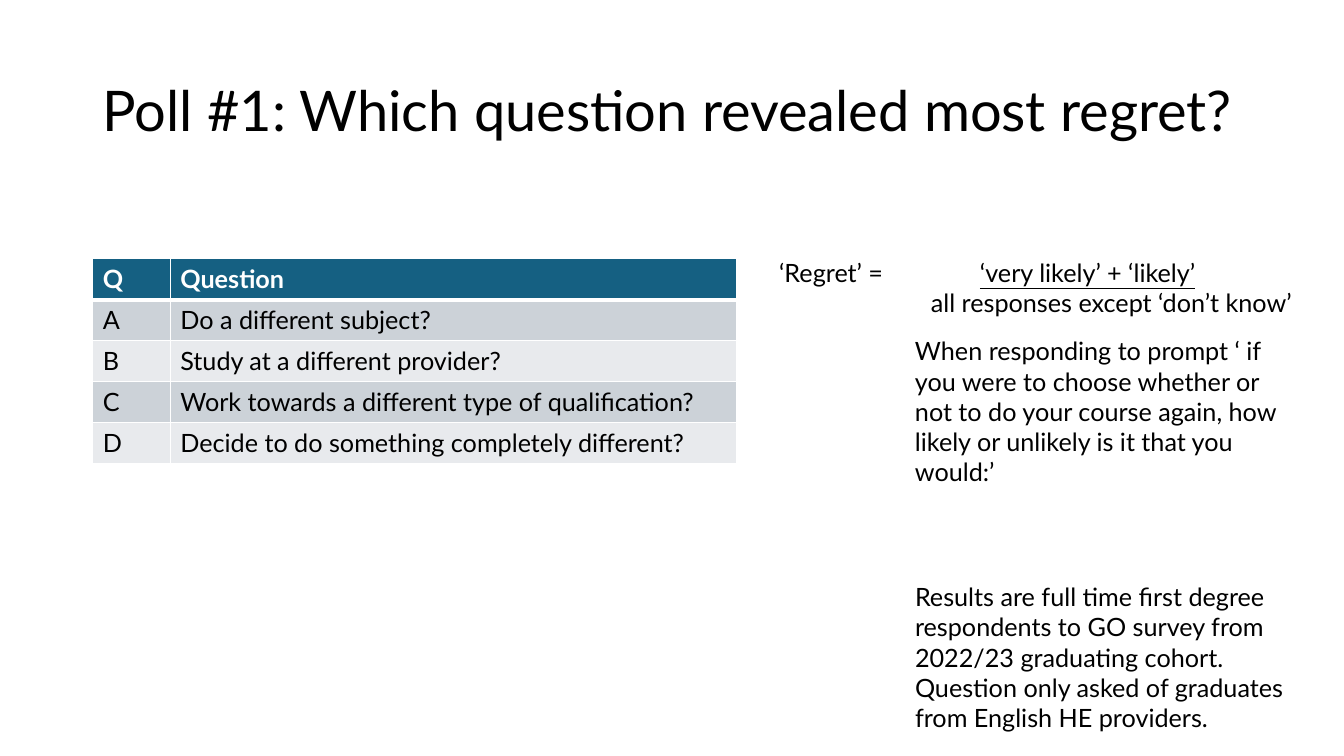
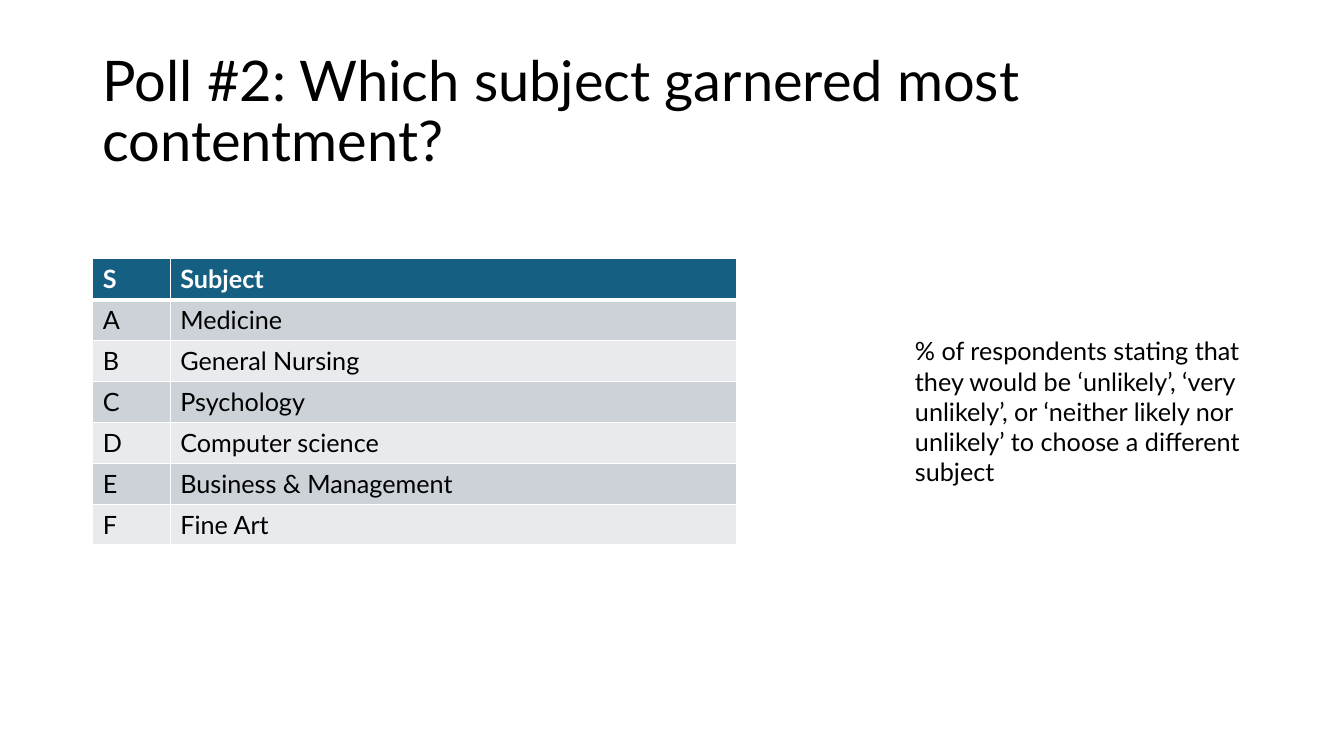
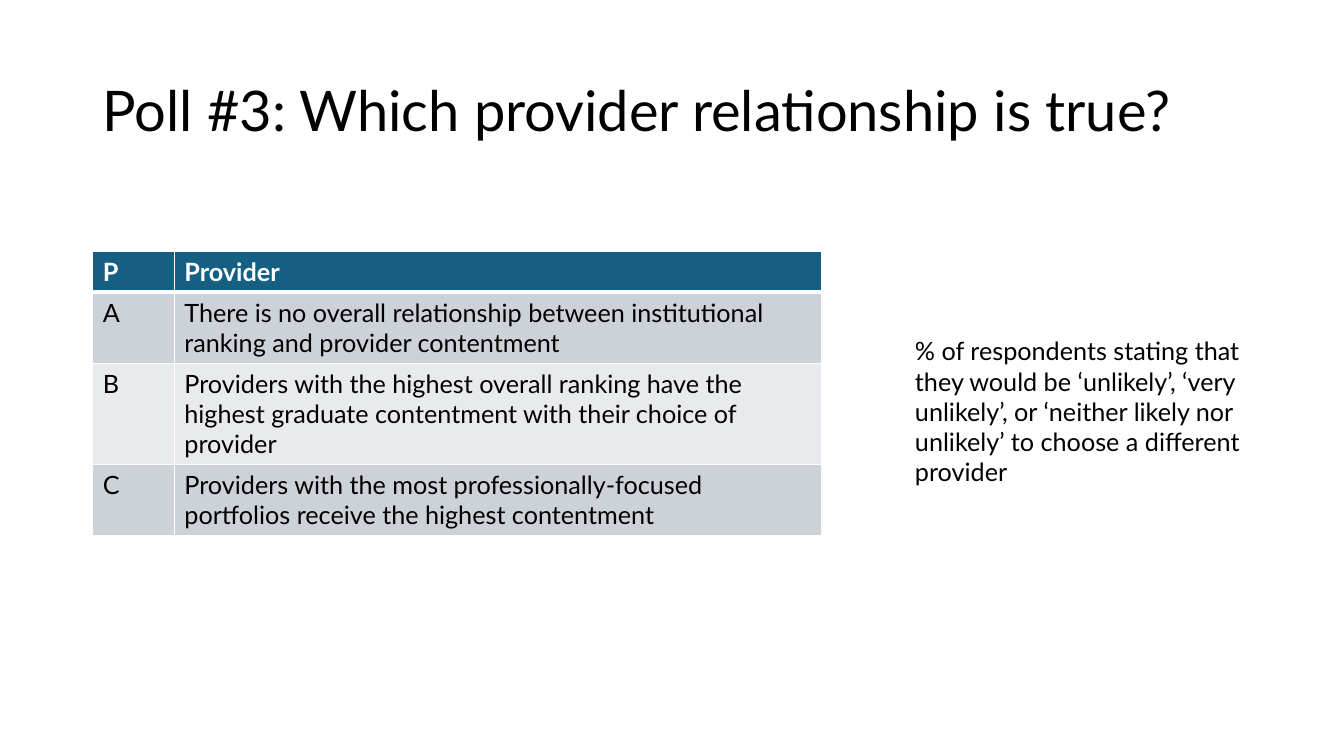
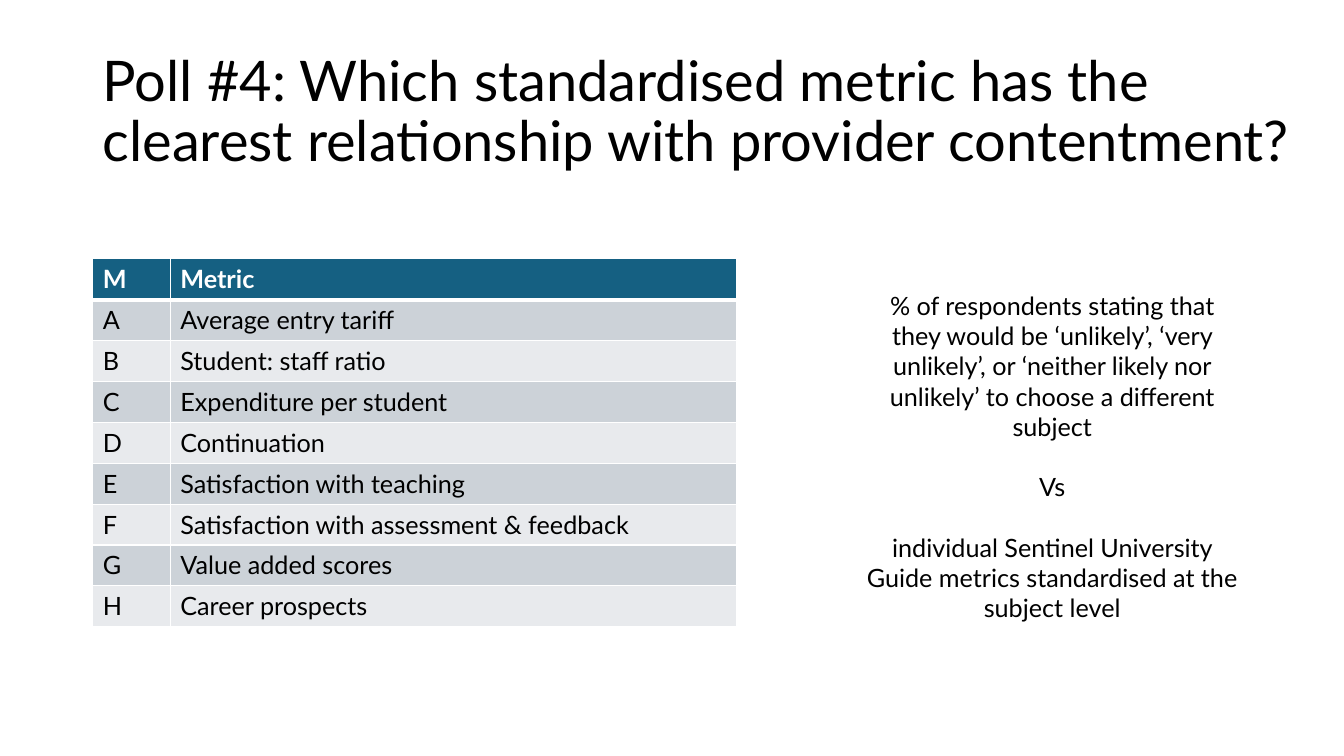
from collections import namedtuple

from lxml import etree
from pptx import Presentation
from pptx import util as u
from pptx.dml import color
from pptx.enum import text
from pptx.oxml import ns

Box = namedtuple("Box", "left top width height")
Poll = namedtuple("Poll", "title title_box table_box key_width header answers lines")

WHITE, BLACK, TEAL = "FFFFFF", "000000", "156082"
BANDS = ("CCD2D8", "E8EAED")
TITLE = {"name": "Lato", "size": u.Pt(40), "bold": False}
BODY = {"name": "Lato", "size": u.Pt(18), "bold": False}
HEADER = {**BODY, "bold": True}
LINE_HEIGHT, ROW_PADDING = 21.6, 7.6
TITLE_BOX = Box(66.24, 28.8, 864, 104.4)
TABLE_BOX = Box(66.24, 184.9, 460.1, 0)
KEY_WIDTH = 55.4
NOTE_BOX = Box(646.5, 236.2, 283.7, 94.3)
CONTENTMENT = ("% of respondents stating that they would be ‘unlikely’, ‘very unlikely’, "
               "or ‘neither likely nor unlikely’ to choose a different ")


def rgb(value):
    """Return the colour for a hex string."""
    return color.RGBColor.from_string(value)


def points(box):
    """Return the measures of a box as lengths."""
    return [u.Pt(value) for value in box]


def apply(target, values):
    """Set each named attribute of the target."""
    for name, value in values.items():
        setattr(target, name, value)


def add_run(paragraph, words, font, hex_color=BLACK, **extra):
    """Append a formatted run to a paragraph."""
    run = paragraph.add_run()
    run.text = words
    apply(run.font, {**font, **extra})
    run.font.color.rgb = rgb(hex_color)


def add_text(slide, box, paragraphs, font=BODY, frame_format=None, **paragraph_format):
    """Place a wrapped text box and return its frame."""
    frame = slide.shapes.add_textbox(*points(box)).text_frame
    apply(frame, {"word_wrap": True, **(frame_format or {})})
    for index, words in enumerate(paragraphs):
        paragraph = frame.add_paragraph() if index else frame.paragraphs[0]
        apply(paragraph, paragraph_format)
        if index and len(paragraphs) > 1:
            paragraph.space_before = u.Pt(LINE_HEIGHT)
        add_run(paragraph, words, font)
    return frame


def add_title(slide, box, words):
    """Place the slide title, centred vertically in its box."""
    add_text(slide, box, [words], TITLE, {"vertical_anchor": text.MSO_ANCHOR.MIDDLE},
             line_spacing=0.9)


def set_borders(cell, widths):
    """Draw white borders of the given widths on a cell."""
    properties = cell._tc.get_or_add_tcPr()
    for side, width in widths.items():
        line = etree.SubElement(properties, ns.qn(f"a:ln{side}"), w=str(u.Pt(width)))
        fill = etree.SubElement(line, ns.qn("a:solidFill"))
        etree.SubElement(fill, ns.qn("a:srgbClr"), val=WHITE)


def add_answers(slide, poll):
    """Place the table of lettered answers."""
    box = poll.table_box
    rows = [poll.header] + list(zip("ABCDEFGH", poll.answers))
    lines = poll.lines or [1] * len(rows)
    heights = [ROW_PADDING + LINE_HEIGHT * count for count in lines]
    table = slide.shapes.add_table(
        len(rows), 2, *points(box._replace(height=sum(heights)))).table
    for column, width in zip(table.columns, (poll.key_width, box.width - poll.key_width)):
        column.width = u.Pt(width)
    for row, values in enumerate(rows):
        table.rows[row].height = u.Pt(heights[row])
        font, ink, fill = (BODY, BLACK, BANDS[(row - 1) % 2]) if row else (HEADER, WHITE, TEAL)
        for column, words in enumerate(values):
            cell = table.cell(row, column)
            set_borders(cell, {"L": 1, "R": 1, "T": 3 if row == 1 else 1, "B": 1 if row else 3})
            cell.fill.solid()
            cell.fill.fore_color.rgb = rgb(fill)
            add_run(cell.text_frame.paragraphs[0], words, font, ink)


def add_formula(slide, box, numerator_left, denominator_left):
    """Place the regret fraction, with its parts set in from the box."""
    frame = add_text(slide, box, ["‘Regret’ =\t"])
    numerator = frame.paragraphs[0]
    add_run(numerator, "‘very likely’ + ‘likely’", BODY, underline=True)
    tabs = etree.SubElement(numerator._p.get_or_add_pPr(), ns.qn("a:tabLst"))
    etree.SubElement(tabs, ns.qn("a:tab"), pos=str(u.Pt(numerator_left)), algn="l")
    denominator = frame.add_paragraph()
    add_run(denominator, "all responses except ‘don’t know’", BODY)
    denominator._p.get_or_add_pPr().set("marL", str(u.Pt(denominator_left)))


def add_poll(presentation, poll):
    """Add a poll slide with its title and answers."""
    slide = presentation.slides.add_slide(presentation.slide_layouts[6])
    add_title(slide, poll.title_box, poll.title)
    add_answers(slide, poll)
    return slide


def main():
    """Build the four poll slides and save them."""
    presentation = Presentation()
    apply(presentation, {"slide_width": u.Pt(960), "slide_height": u.Pt(540)})

    regret = add_poll(presentation, Poll(
        "Poll #1: Which question revealed most regret?", TITLE_BOX._replace(width=828),
        TABLE_BOX, KEY_WIDTH, ("Q", "Question"),
        ("Do a different subject?", "Study at a different provider?",
         "Work towards a different type of qualification?",
         "Decide to do something completely different?"), None))
    add_formula(regret, Box(549.4, 180, 406, 51), 143.5, 108.4)
    add_text(regret, NOTE_BOX, [
        "When responding to prompt ‘ if you were to choose whether or not to do your course "
        "again, how likely or unlikely is it that you would:’"])
    add_text(regret, Box(NOTE_BOX.left, 411.8, 289.4, 116.6), [
        "Results are full time first degree respondents to GO survey from 2022/23 graduating "
        "cohort. Question only asked of graduates from English HE providers."])

    subject = add_poll(presentation, Poll(
        "Poll #2: Which subject garnered most contentment?", TITLE_BOX,
        TABLE_BOX, KEY_WIDTH, ("S", "Subject"),
        ("Medicine", "General Nursing", "Psychology", "Computer science",
         "Business & Management", "Fine Art"), None))
    add_text(subject, NOTE_BOX, [CONTENTMENT + "subject"])

    provider = add_poll(presentation, Poll(
        "Poll #3: Which provider relationship is true?", TITLE_BOX,
        TABLE_BOX._replace(top=179.6, width=520.6), 58.3, ("P", "Provider"),
        ("There is no overall relationship between institutional ranking and provider contentment",
         "Providers with the highest overall ranking have the highest graduate contentment "
         "with their choice of provider",
         "Providers with the most professionally-focused portfolios receive the highest "
         "contentment"), (1, 2, 3, 2)))
    add_text(provider, NOTE_BOX, [CONTENTMENT + "provider"])

    metric = add_poll(presentation, Poll(
        "Poll #4: Which standardised metric has the clearest relationship with provider "
        "contentment?", TITLE_BOX, TABLE_BOX, KEY_WIDTH, ("M", "Metric"),
        ("Average entry tariff", "Student: staff ratio", "Expenditure per student",
         "Continuation", "Satisfaction with teaching",
         "Satisfaction with assessment & feedback", "Value added scores",
         "Career prospects"), None))
    add_text(metric, Box(609.8, 203.8, 283.7, 225.4), [
        CONTENTMENT + "subject", "Vs",
        "individual Sentinel University Guide metrics standardised at the subject level"],
        alignment=text.PP_ALIGN.CENTER)

    presentation.save("out.pptx")


if __name__ == "__main__":
    main()
